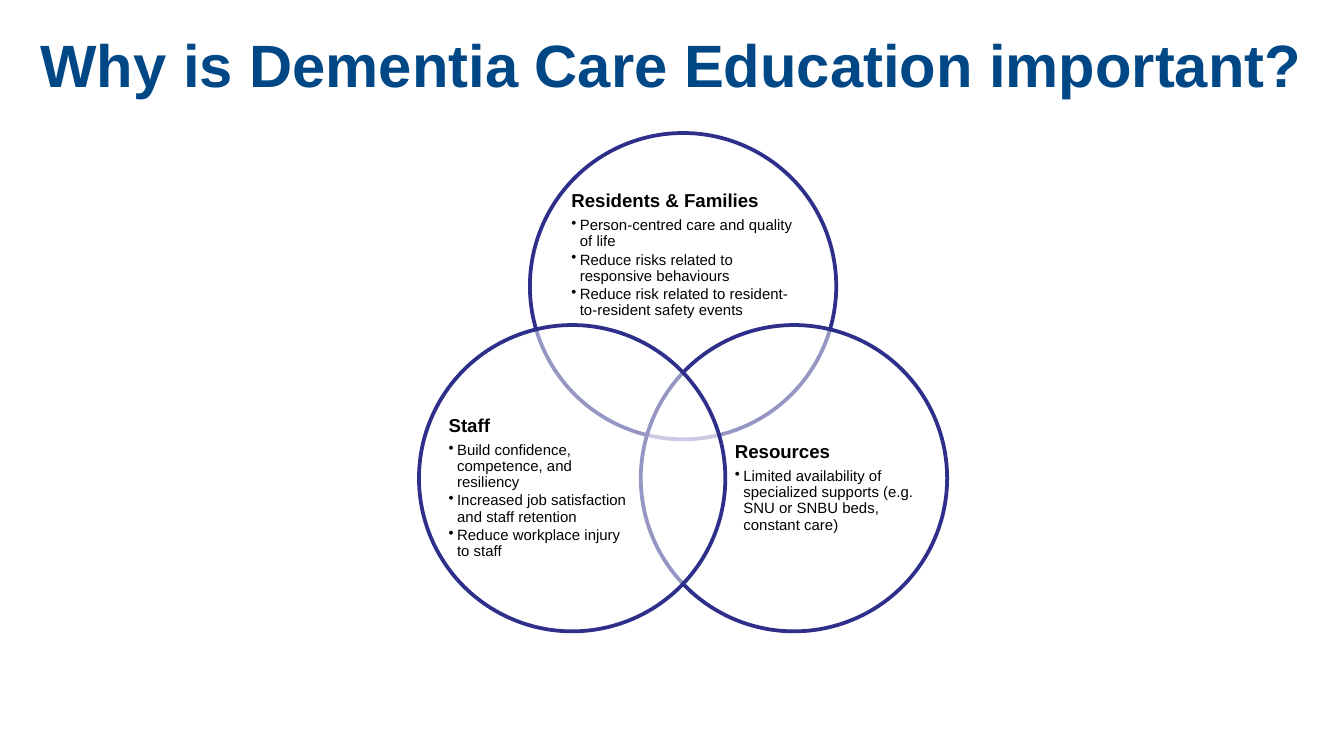
from math import cos, radians, sin

from lxml.etree import SubElement as Sub
from pptx import Presentation as Deck
from pptx.dml.color import RGBColor as Color
from pptx.enum.shapes import MSO_SHAPE as Shape
from pptx.enum.text import MSO_ANCHOR as Anchor, MSO_AUTO_SIZE as Fit, PP_ALIGN as Align
from pptx.oxml.ns import qn
from pptx.util import Cm, Pt

BLUE = Color(0x00, 0x47, 0x85)
NAVY = Color(0x2E, 0x2E, 0x8B)
BLACK = Color(0x00, 0x00, 0x00)
WHITE = Color(0xFF, 0xFF, 0xFF)

MID_X, MID_Y = 12.91, 7.83
REACH = 2.42
SIZE = 5.79

RINGS = [
    (-90, (10.8, 3.51, 4.27, 2.62), "Residents & Families", [
        "Person-centred care and quality of life",
        "Reduce risks related to responsive behaviours",
        "Reduce risk related to resident-to-resident safety events",
    ]),
    (30, (13.89, 7.62, 3.48, 3.2), "Resources", [
        "Limited availability of specialized supports (e.g. SNU or SNBU beds, constant care)",
    ]),
    (150, (8.48, 7.62, 3.48, 3.2), "Staff", [
        "Build confidence, competence, and resiliency",
        "Increased job satisfaction and staff retention",
        "Reduce workplace injury to staff",
    ]),
]


class Page:
    face = "Arial"

    def __init__(self, slide):
        self.slide = slide

    def style(self, para, size, color, bold=False):
        font = para.font
        font.name, font.size, font.bold = self.face, Pt(size), bold
        font.color.rgb = color

    def frame(self, shape):
        frame = shape.text_frame
        frame.word_wrap = True
        frame.auto_size = Fit.NONE
        frame.vertical_anchor = Anchor.MIDDLE
        frame.margin_left = frame.margin_right = 0
        frame.margin_top = frame.margin_bottom = 0
        return frame

    def title(self, text, box):
        shape = self.slide.shapes.title
        shape.left, shape.top, shape.width, shape.height = map(Cm, box)
        para = self.frame(shape).paragraphs[0]
        para.text = text
        para.alignment = Align.CENTER
        self.style(para, 32, BLUE, True)

    def ring(self, x, y, size):
        box = (x - size / 2, y - size / 2, size, size)
        shape = self.slide.shapes.add_shape(Shape.OVAL, *map(Cm, box))
        shape.shadow.inherit = False
        shape.fill.solid()
        shape.fill.fore_color.rgb = WHITE
        tint = shape.fill._xPr.find(".//" + qn("a:srgbClr"))
        Sub(tint, qn("a:alpha"), val="50000")
        shape.line.color.rgb = NAVY
        shape.line.width = Pt(2)

    def bullet(self, para):
        props = para._p.get_or_add_pPr()
        props.set("marL", str(Cm(0.16)))
        props.set("indent", str(-Cm(0.16)))
        Sub(props, qn("a:buChar"), char="•")

    def notes(self, box, head, items):
        frame = self.frame(self.slide.shapes.add_textbox(*map(Cm, box)))
        para = frame.paragraphs[0]
        para.text = head
        para.line_spacing = 0.9
        para.space_after = Pt(3.5)
        self.style(para, 10, BLACK, True)
        for item in items:
            para = frame.add_paragraph()
            para.text = item
            para.level = 1
            self.bullet(para)
            para.line_spacing = 0.9
            para.space_after = Pt(1.2)
            self.style(para, 8, BLACK)


def main():
    deck = Deck()
    deck.slide_width, deck.slide_height = Cm(25.4), Cm(14.29)
    page = Page(deck.slides.add_slide(deck.slide_layouts[5]))
    page.title("Why is Dementia Care Education important?", (0.5, 0, 24.4, 2.4))
    for angle, box, head, items in RINGS:
        turn = radians(angle)
        page.ring(MID_X + REACH * cos(turn), MID_Y + REACH * sin(turn), SIZE)
        page.notes(box, head, items)
    deck.save("out.pptx")


if __name__ == "__main__":
    main()
